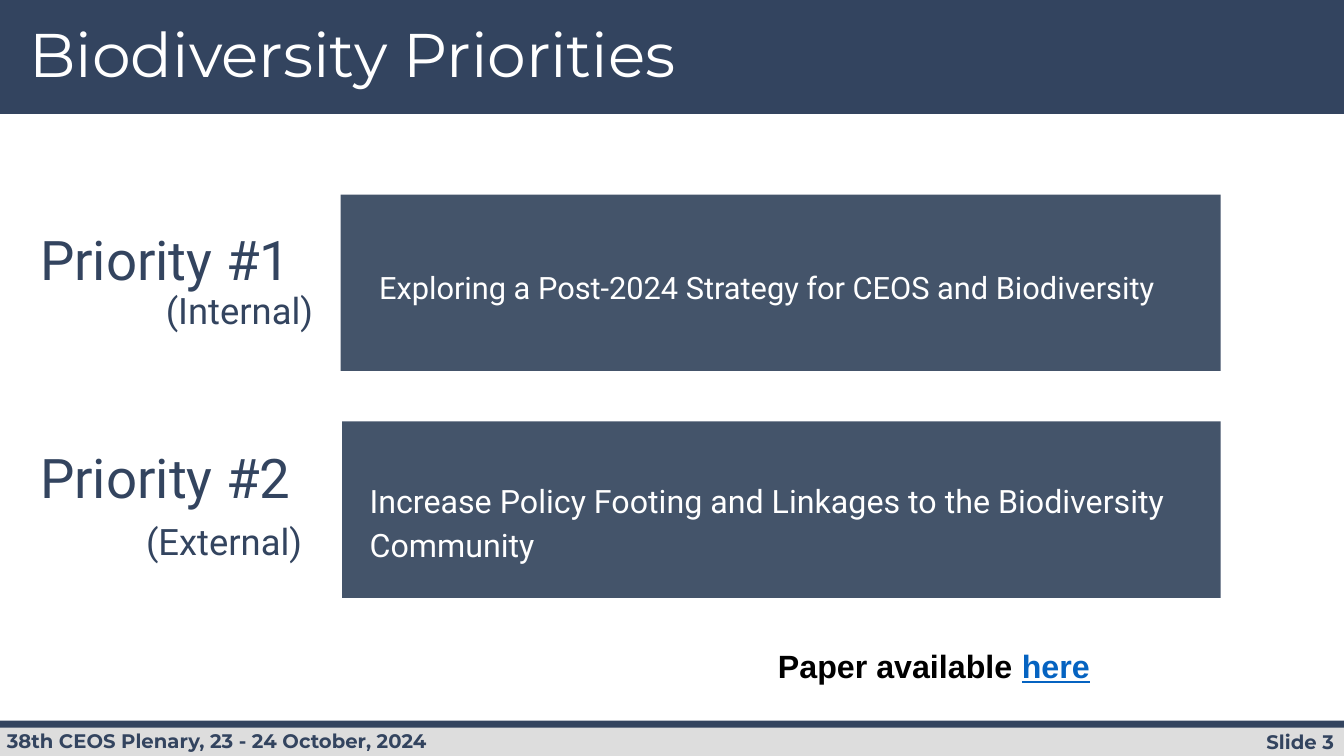
from collections import namedtuple
from dataclasses import dataclass

from pptx import Presentation
from pptx.dml.color import RGBColor
from pptx.enum.shapes import MSO_SHAPE as Shape
from pptx.enum.text import MSO_ANCHOR as Anchor, PP_ALIGN as Align
from pptx.util import Pt

Box = namedtuple("Box", "left top width height")


@dataclass(frozen=True)
class Theme:
    navy: str = "33445F"
    slate: str = "44546A"
    grey: str = "DDDDDD"
    white: str = "FFFFFF"
    black: str = "000000"
    link: str = "0563C1"
    heading_font: str = "Montserrat"
    body_font: str = "Roboto"
    note_font: str = "Arial"
    title_size: int = 44
    label_size: int = 39
    scope_size: int = 26
    note_size: int = 23
    footer_size: int = 14


THEME = Theme()


def add_bar(page, box, color):
    bar = page.shapes.add_shape(Shape.RECTANGLE, *map(Pt, box))
    bar.shadow.inherit = False
    bar.fill.solid()
    bar.fill.fore_color.rgb = RGBColor.from_string(color)
    bar.line.fill.background()


def add_text(page, box, text, inset=(7.2, 3.6), anchor=Anchor.TOP):
    """Add a wrapping text box; inset is (horizontal, vertical)."""
    frame = page.shapes.add_textbox(*map(Pt, box)).text_frame
    frame.word_wrap = True
    frame.margin_left = frame.margin_right = Pt(inset[0])
    frame.margin_top = frame.margin_bottom = Pt(inset[1])
    frame.vertical_anchor = anchor
    frame.text = text
    return frame


def style(para, font, size, color, bold=False, spacing=None, align=Align.LEFT):
    para.alignment = align
    if spacing:
        para.line_spacing = spacing
    for span in para.runs:
        span.font.name = font
        span.font.size = Pt(size)
        span.font.bold = bold
        span.font.color.rgb = RGBColor.from_string(color)


def add_header(page, box, title):
    add_bar(page, box, THEME.navy)
    title_box = Box(box.left + 13.7, box.top + 13.7, 740, 61)
    frame = add_text(page, title_box, title)
    style(frame.paragraphs[0], THEME.heading_font, THEME.title_size,
          THEME.white, spacing=0.9)


def add_footer(page, box, event, number):
    add_bar(page, box, THEME.grey)
    add_bar(page, Box(box.left, box.top - 2.9, box.width, 5), THEME.navy)
    number_width = 152
    number_left = box.left + box.width - number_width
    entries = (
        (event, Box(box.left - 2.2, box.top - 0.7, 463, 24.5), Align.LEFT),
        (number, Box(number_left, box.top, number_width, 24.5), Align.RIGHT),
    )
    for text, place, align in entries:
        frame = add_text(page, place, text)
        style(frame.paragraphs[0], THEME.heading_font, THEME.footer_size,
              THEME.navy, bold=True, align=align)


def add_priority(page, box, name, scope, scope_right, scope_gap,
                 goal, goal_size, goal_inset, goal_shift):
    """Place a goal card in the box, with its label and scope to the left."""
    label_left = 28.6
    label_box = Box(label_left, box.top + 8.6 - scope_gap * 0.15,
                    scope_right - label_left, 108.7)
    label = add_text(page, label_box, f"{name}\n{scope}", (0, 5), Anchor.MIDDLE)
    name_para, scope_para = label.paragraphs
    style(name_para, THEME.body_font, THEME.label_size, THEME.navy, spacing=0.9)
    style(scope_para, THEME.body_font, THEME.scope_size, THEME.navy,
          spacing=0.9, align=Align.RIGHT)
    scope_para.space_before = Pt(scope_gap)

    add_bar(page, box, THEME.slate)
    goal_box = Box(box.left + goal_inset, box.top + goal_shift,
                   box.width - goal_inset, box.height)
    frame = add_text(page, goal_box, goal, (0, 5), Anchor.MIDDLE)
    style(frame.paragraphs[0], THEME.body_font, goal_size, THEME.white,
          spacing=1.15)


def add_paper_note(page, box, lead, link_word):
    frame = add_text(page, box, lead, (7.2, 7.2))
    para = frame.paragraphs[0]
    link_span = para.add_run()
    link_span.text = link_word
    style(para, THEME.note_font, THEME.note_size, THEME.black, bold=True)
    link_span.font.color.rgb = RGBColor.from_string(THEME.link)
    link_span.font.underline = True


def main():
    deck = Presentation()
    deck.slide_width, deck.slide_height = Pt(960), Pt(540)
    page = deck.slides.add_slide(deck.slide_layouts[6])

    add_header(page, Box(0, 0, 960, 81.4), "Biodiversity Priorities")
    add_footer(page, Box(0, 517.7, 960, 22.3),
               "38th CEOS Plenary, 23 - 24 October, 2024", "Slide 3")
    add_priority(page, Box(243.4, 139, 628.6, 126),
                 "Priority #1", "(Internal)", 223.9, 0,
                 "Exploring a Post-2024 Strategy for CEOS and Biodiversity",
                 22, 27.4, 1)
    add_priority(page, Box(244.4, 301, 627.6, 126),
                 "Priority #2", "(External)", 216, 10.5,
                 "Increase Policy Footing and Linkages to the "
                 "Biodiversity Community", 23, 19.6, 7.2)
    add_paper_note(page, Box(548.6, 454.3, 411.4, 31.7),
                   "Paper available ", "here")
    deck.save("out.pptx")


if __name__ == "__main__":
    main()
